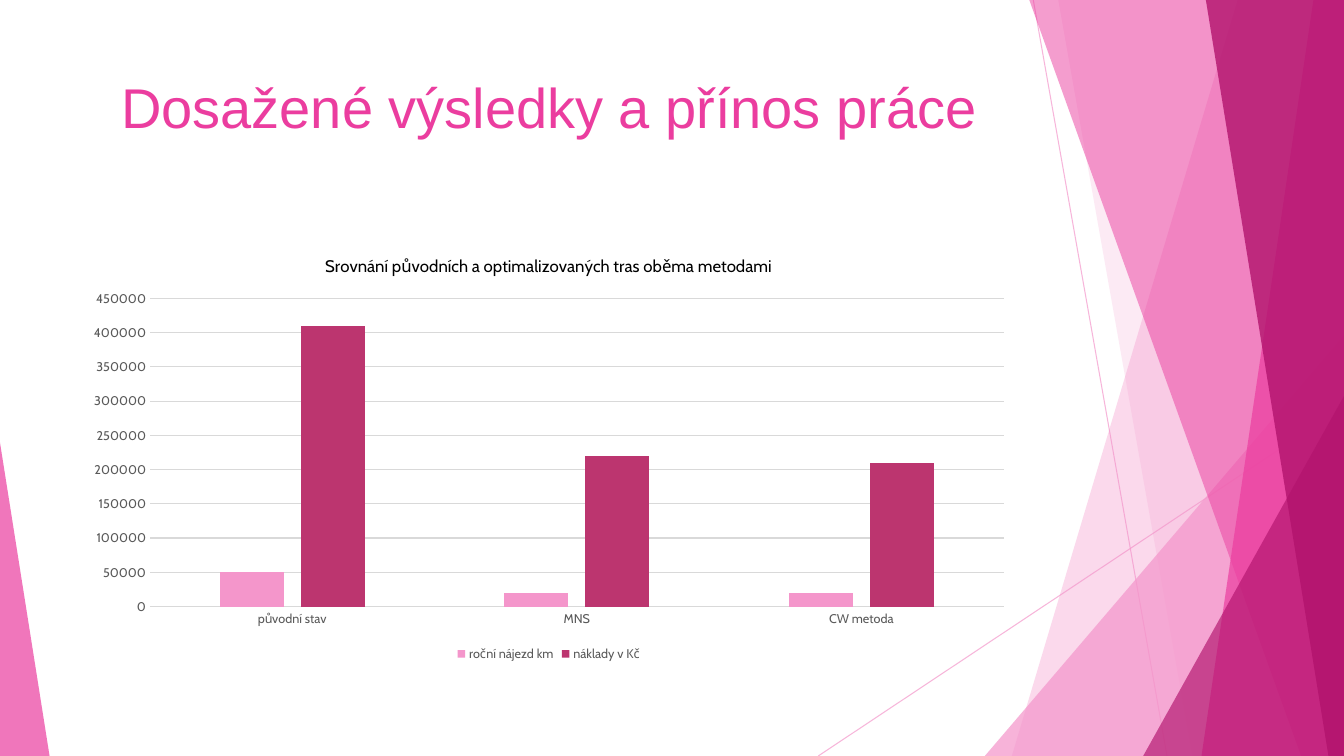
"""Builds a slide with a clustered column chart beside a fan of pink facets."""
from lxml.etree import SubElement
from pptx import Presentation
from pptx.chart.data import CategoryChartData
from pptx.dml.color import RGBColor
from pptx.enum.chart import XL_CHART_TYPE as ChartType, XL_LEGEND_POSITION as LegendPos
from pptx.enum.chart import XL_TICK_MARK as TickMark
from pptx.enum.shapes import MSO_CONNECTOR as Connector, MSO_SHAPE as Shape
from pptx.enum.text import MSO_ANCHOR as Anchor, PP_ALIGN as Align
from pptx.oxml.ns import qn
from pptx.util import Cm, Pt

TITLE = "Dosažené výsledky a přínos práce"
CHART_TITLE = "Srovnání původních a optimalizovaných tras oběma metodami"
CATEGORIES = ["původní stav", "MNS", "CW metoda"]
SERIES = [
    ("roční nájezd km", [50000, 20000, 20000], "light"),
    ("náklady v Kč", [410000, 220000, 210000], "berry"),
]
COLORS = {"light": "F496CB", "pink": "EB3D9F", "dark": "B2136D", "berry": "BC356F",
          "black": "000000", "label": "595959", "grid": "D9D9D9"}

WIDTH, HEIGHT = 33.87, 19.05
BODY_LEFT, BODY_WIDTH = 1.89, 23.88
RAYS = [((26.04, 0), (29.41, HEIGHT)), ((WIDTH, 10.24), (20.62, HEIGHT))]
FACETS = [
    ("band", 31.19, 25.5, "light", 36),
    ("band", 26.67, 30.05, "light", 20),
    ("triangle", 24.82, 8.46, "light", 72),
    ("band", 25.94, 32.79, "pink", 50),
    ("band", 33.1, 30.28, "pink", 70),
    ("band", 30.39, 33.48, "dark", 80),
    ("triangle", 28.81, 9.98, "dark", 66),
]
CORNER_WIDTH, CORNER_TOP = 1.25, 11.15


def rgb(name):
    return RGBColor.from_string(COLORS[name])


def paint(fill, color, opacity=100):
    fill.solid()
    fill.fore_color.rgb = rgb(color)
    if opacity < 100:
        for tone in fill._xPr.iter(qn("a:srgbClr")):
            SubElement(tone, qn("a:alpha")).set("val", str(opacity * 1000))


def style_font(font, size, color, face="Cabin"):
    font.size, font.name, font.bold = Pt(size), face, False
    font.color.rgb = rgb(color)


def finish_facet(facet, color, opacity):
    facet.shadow.inherit = False
    paint(facet.fill, color, opacity)
    facet.line.fill.background()


def add_ray(shapes, start, end):
    ray = shapes.add_connector(Connector.STRAIGHT, *map(Cm, start + end))
    ray.line.width = Pt(0.75)
    paint(ray.line.fill, "light", 70)
    SubElement(ray._element.spPr, qn("a:effectLst"))


def add_band(shapes, top_x, bottom_x, color, opacity):
    outline = shapes.build_freeform(Cm(top_x), 0)
    corners = [(WIDTH, 0), (WIDTH, HEIGHT), (bottom_x, HEIGHT)]
    outline.add_line_segments([(Cm(x), Cm(y)) for x, y in corners])
    finish_facet(outline.convert_to_shape(), color, opacity)


def add_triangle(shapes, left, top, width, apex, color, opacity):
    triangle = shapes.add_shape(Shape.ISOSCELES_TRIANGLE, Cm(left), Cm(top),
                                Cm(width), Cm(HEIGHT - top))
    triangle.adjustments[0] = apex
    finish_facet(triangle, color, opacity)


def add_decoration(shapes):
    for start, end in RAYS:
        add_ray(shapes, start, end)
    for kind, first, second, color, opacity in FACETS:
        if kind == "band":
            add_band(shapes, first, second, color, opacity)
        else:
            add_triangle(shapes, first, second, WIDTH - first, 1, color, opacity)
    add_triangle(shapes, 0, CORNER_TOP, CORNER_WIDTH, 0, "pink", 70)


def add_title(title):
    title.left, title.top = Cm(BODY_LEFT), Cm(1.7)
    title.width, title.height = Cm(BODY_WIDTH), Cm(3.66)
    frame = title.text_frame
    frame.text, frame.vertical_anchor, frame.word_wrap = TITLE, Anchor.TOP, True
    heading = frame.paragraphs[0]
    heading.alignment = Align.CENTER
    style_font(heading.font, 40, "pink", "Arial")


def add_results_chart(shapes):
    results = CategoryChartData()
    results.categories = CATEGORIES
    for name, values, _ in SERIES:
        results.add_series(name, values)
    chart = shapes.add_chart(ChartType.COLUMN_CLUSTERED, Cm(BODY_LEFT), Cm(6),
                             Cm(BODY_WIDTH), Cm(10.78), results).chart
    style_font(chart.font, 10, "black")

    chart.has_title = True
    caption = chart.chart_title.text_frame
    caption.text = CHART_TITLE
    style_font(caption.paragraphs[0].font, 12, "black")
    chart.chart_title.include_in_layout = False

    chart.has_legend = True
    chart.legend.position = LegendPos.BOTTOM
    chart.legend.include_in_layout = False
    style_font(chart.legend.font, 9, "label")

    categories, amounts = chart.category_axis, chart.value_axis
    for axis in (categories, amounts):
        axis.major_tick_mark = axis.minor_tick_mark = TickMark.NONE
        style_font(axis.tick_labels.font, 9, "label")
    amounts.minimum_scale, amounts.maximum_scale, amounts.major_unit = 0, 450000, 50000
    amounts.format.line.fill.background()
    amounts.has_major_gridlines = True
    for rule in (categories.format.line, amounts.major_gridlines.format.line):
        rule.width = Pt(0.75)
        paint(rule.fill, "grid")

    plot = chart.plots[0]
    plot.gap_width, plot.overlap, plot.vary_by_categories = 219, -27, False
    for column, (_, _, color) in zip(plot.series, SERIES):
        paint(column.format.fill, color)
        column.invert_if_negative = False


def main():
    deck = Presentation()
    deck.slide_width, deck.slide_height = Cm(WIDTH), Cm(HEIGHT)
    shapes = deck.slides.add_slide(deck.slide_layouts[5]).shapes
    add_decoration(shapes)
    add_title(shapes.title)
    add_results_chart(shapes)
    deck.save("out.pptx")


if __name__ == "__main__":
    main()
